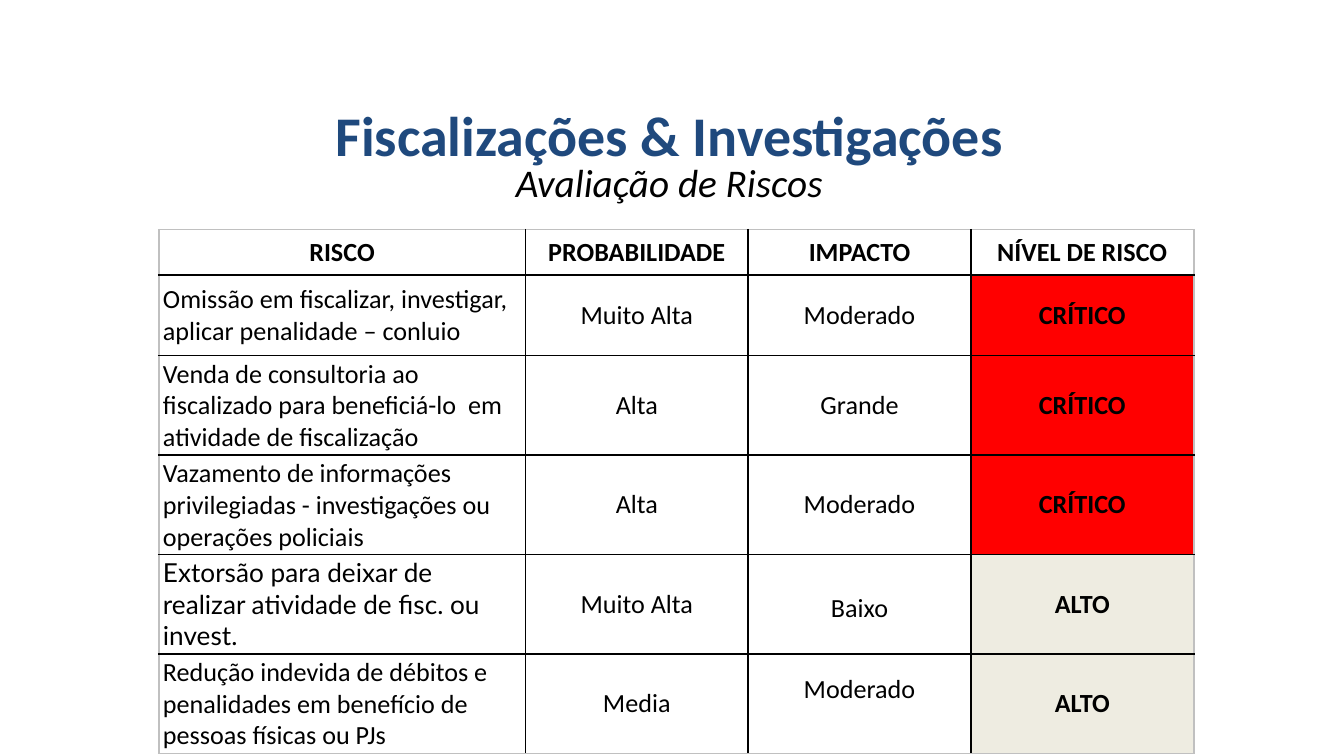
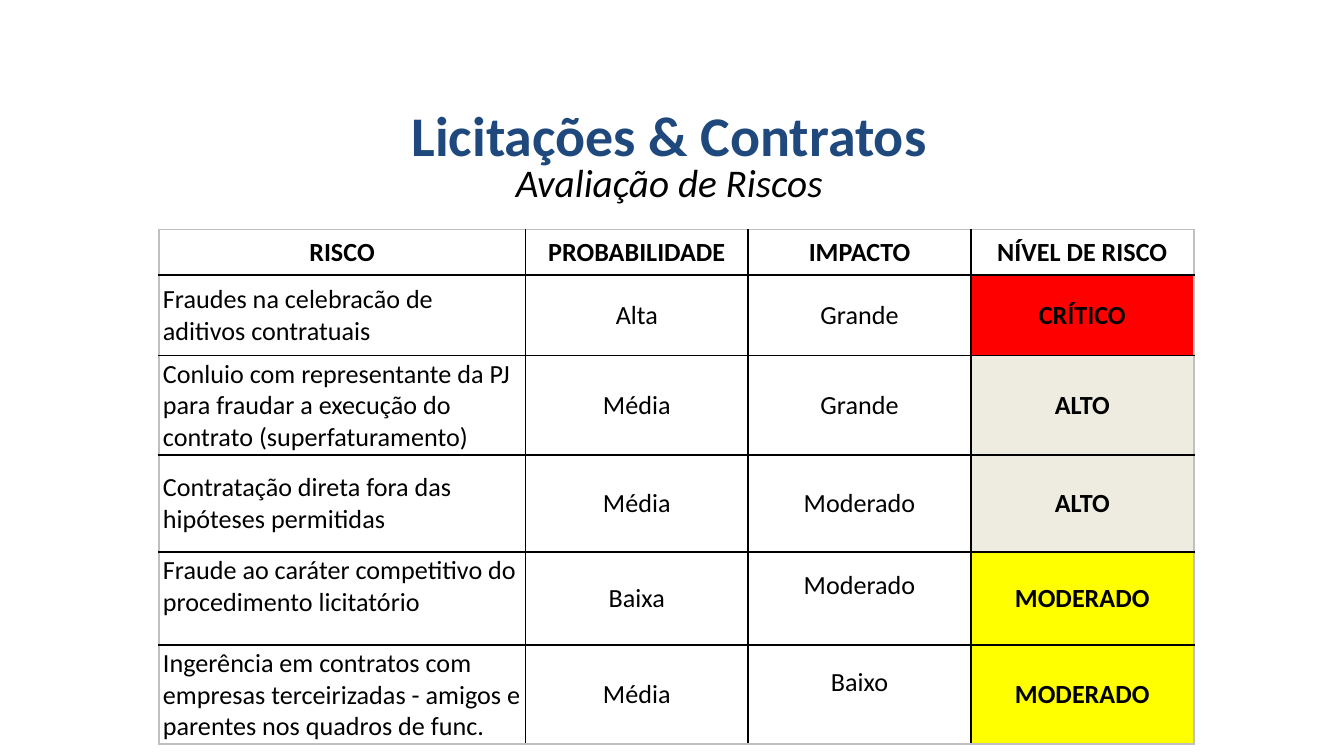
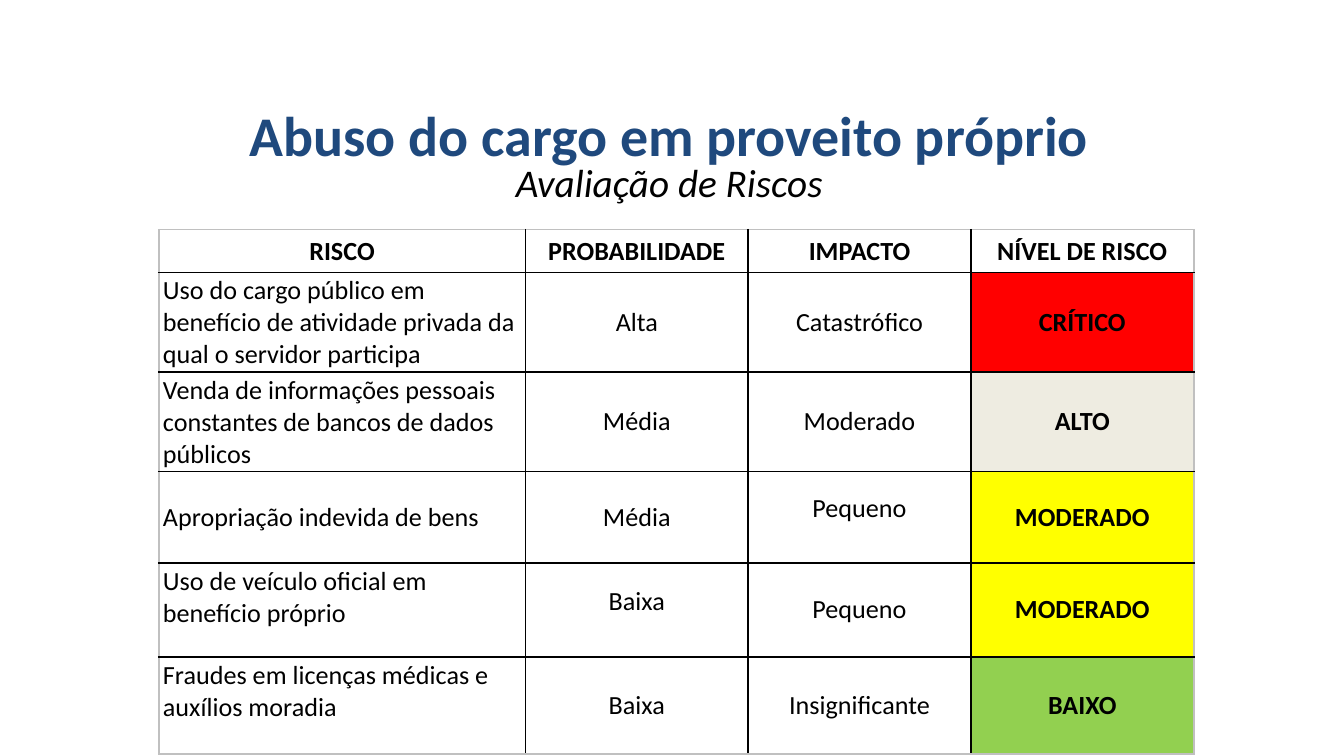
from lxml import etree
from pptx import Presentation
from pptx.dml.color import RGBColor
from pptx.enum.text import MSO_ANCHOR, MSO_AUTO_SIZE, PP_ALIGN
from pptx.oxml.ns import qn
from pptx.util import Cm, Pt

MID = MSO_ANCHOR.MIDDLE
GROW = MSO_AUTO_SIZE.SHAPE_TO_FIT_TEXT
LEFT, CENTER = PP_ALIGN.LEFT, PP_ALIGN.CENTER

HEX = {"title": "1F497D", "text": "000000", "grid": "000000", "frame": "C0C0C0"}
LEVELS = {"CRÍTICO": "FF0000", "ALTO": "EEECE1", "MODERADO": "FFFF00", "BAIXO": "92D050"}
FONT = "Calibri"
SUB = "Avaliação de Riscos"
HEAD = ("RISCO", "PROBABILIDADE", "IMPACTO", "NÍVEL DE RISCO")
COLS = (6.93, 4.21, 4.21, 4.21)
MID_X = 12.65

# "lift" raises a cell's text by widening its bottom margin; below zero lowers it.
SLIDES = [
    {
        "title": "Fiscalizações & Investigações", "width": 13.26,
        "heights": (0.86, 1.52, 1.8, 1.83, 1.68, 1.8),
        "lift": {(4, 2): -0.15, (5, 2): 0.53},
        "fonts": {(4, 0): "Lato"},
        "rows": [
            ("Omissão em fiscalizar, investigar, aplicar penalidade – conluio",
             "Muito Alta", "Moderado", "CRÍTICO"),
            ("Venda de consultoria ao fiscalizado para beneficiá-lo  em atividade de fiscalização",
             "Alta", "Grande", "CRÍTICO"),
            ("Vazamento de informações privilegiadas - investigações ou operações policiais",
             "Alta", "Moderado", "CRÍTICO"),
            ("Extorsão para deixar de realizar atividade de fisc. ou invest.",
             "Muito Alta", "Baixo", "ALTO"),
            ("Redução indevida de débitos e penalidades em benefício de pessoas físicas ou PJs",
             "Media", "Moderado", "ALTO"),
        ],
    },
    {
        "title": "Licitações & Contratos", "width": 10.34,
        "heights": (0.86, 1.52, 1.8, 1.83, 1.73, 1.8),
        "lift": {(4, 0): 0.47, (4, 2): 0.47, (5, 2): 0.47},
        "fonts": {},
        "rows": [
            ("Fraudes na celebracão de aditivos contratuais", "Alta", "Grande", "CRÍTICO"),
            ("Conluio com representante da PJ para fraudar a execução do contrato (superfaturamento)",
             "Média", "Grande", "ALTO"),
            ("Contratação direta fora das hipóteses permitidas", "Média", "Moderado", "ALTO"),
            ("Fraude ao caráter competitivo do procedimento licitatório",
             "Baixa", "Moderado", "MODERADO"),
            ("Ingerência em contratos com empresas terceirizadas - amigos e parentes nos quadros de func.",
             "Média", "Baixo", "MODERADO"),
        ],
    },
    {
        "title": "Abuso do cargo em proveito próprio", "width": 16.51,
        "heights": (0.81, 1.8, 1.8, 1.73, 1.73, 1.8),
        "lift": {(3, 2): 0.32, (4, 0): 0.49, (4, 1): 0.32, (5, 0): 0.55},
        "fonts": {},
        "rows": [
            ("Uso do cargo público em benefício de atividade privada da qual o servidor participa",
             "Alta", "Catastrófico", "CRÍTICO"),
            ("Venda de informações pessoais constantes de bancos de dados públicos",
             "Média", "Moderado", "ALTO"),
            ("Apropriação indevida de bens", "Média", "Pequeno", "MODERADO"),
            ("Uso de veículo oficial em benefício próprio", "Baixa", "Pequeno", "MODERADO"),
            ("Fraudes em licenças médicas e auxílios moradia",
             "Baixa", "Insignificante", "BAIXO"),
        ],
    },
]


def write(frame, text, size, color="text", bold=False, italic=False, face=FONT, align=CENTER):
    par = frame.paragraphs[0]
    par.alignment = align
    run = par.add_run()
    run.text = text
    font = run.font
    font.name, font.size, font.bold, font.italic = face, Pt(size), bold, italic
    font.color.rgb = RGBColor.from_string(HEX[color])


def label(slide, text, top, width, height, wrap, **style):
    box = slide.shapes.add_textbox(Cm(MID_X - width / 2), Cm(top), Cm(width), Cm(height))
    frame = box.text_frame
    frame.word_wrap = wrap
    frame.auto_size = GROW
    write(frame, text, **style)


def border(cell, side, color):
    line = etree.SubElement(cell._tc.get_or_add_tcPr(), qn("a:ln" + side), w=str(Pt(1)))
    fill = etree.SubElement(line, qn("a:solidFill"))
    etree.SubElement(fill, qn("a:srgbClr"), val=HEX[color])


def grid(slide, data):
    rows = [HEAD] + data["rows"]
    tall = data["heights"]
    table = slide.shapes.add_table(len(rows), len(COLS), Cm(3), Cm(4.34),
                                   Cm(sum(COLS)), Cm(sum(tall))).table
    table.first_row = table.horz_banding = False
    for col, wide in zip(table.columns, COLS):
        col.width = Cm(wide)
    for row, high in zip(table.rows, tall):
        row.height = Cm(high)
    last_r, last_c = len(rows) - 1, len(COLS) - 1
    for r, row in enumerate(rows):
        for c, text in enumerate(row):
            cell = table.cell(r, c)
            lift = data["lift"].get((r, c), 0)
            cell.vertical_anchor = MID
            cell.margin_left = cell.margin_right = Cm(0.08)
            cell.margin_top = Cm(0.05 + max(-lift, 0))
            cell.margin_bottom = Cm(0.05 + max(lift, 0))
            edges = {"L": c == 0, "R": c == last_c, "T": r == 0, "B": r == last_r}
            for side, outer in edges.items():
                border(cell, side, "frame" if outer else "grid")
            level = r > 0 and c == last_c
            if level:
                cell.fill.solid()
                cell.fill.fore_color.rgb = RGBColor.from_string(LEVELS[text])
            else:
                cell.fill.background()
            write(cell.text_frame, text, 14, bold=r == 0 or level,
                  face=data["fonts"].get((r, c), FONT),
                  align=LEFT if r and c == 0 else CENTER)


def main():
    deck = Presentation()
    deck.slide_width, deck.slide_height = Cm(25.4), Cm(14.29)
    for data in SLIDES:
        slide = deck.slides.add_slide(deck.slide_layouts[6])
        label(slide, data["title"], 1.78, data["width"], 1.55, False,
              size=30, color="title", bold=True)
        label(slide, SUB, 2.87, 19.84, 1.14, True, size=21, italic=True)
        grid(slide, data)
    deck.save("out.pptx")


if __name__ == "__main__":
    main()
